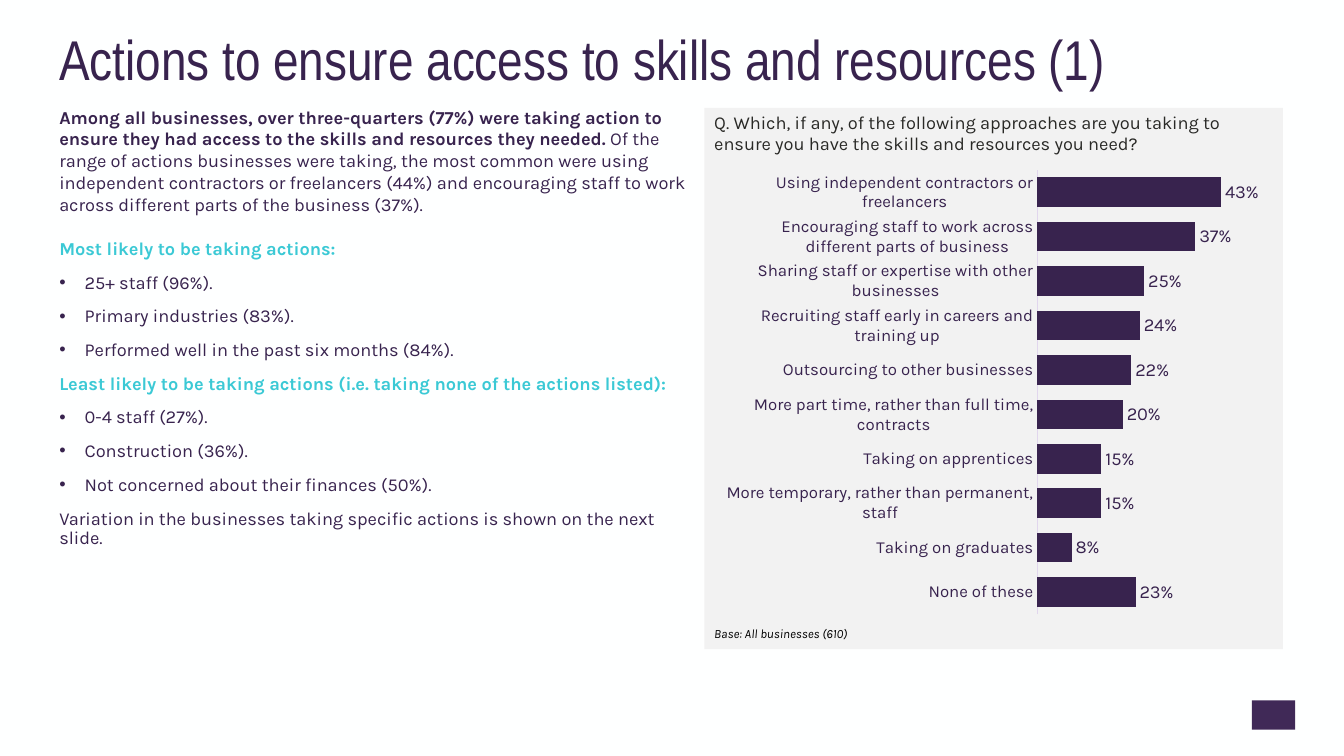
from lxml import etree
from pptx import Presentation
from pptx import util as u
from pptx.chart.data import CategoryChartData
from pptx.dml.color import RGBColor
from pptx.enum import chart as ch, shapes, text
from pptx.oxml import parse_xml
from pptx.oxml.ns import nsdecls, qn

PURPLE, TEAL, PANEL_GREY = "38234E", "3BC9D5", "F2F2F2"
BODY_FONT = "Karla"

TITLE = "Actions to ensure access to skills and resources (1)"
LEAD = ("Among all businesses, over three-quarters (77%) were taking action to "
        "ensure they had access to the skills and resources they needed. ")
LEAD_DETAIL = ("Of the range of actions businesses were taking, the most common were "
               "using independent contractors or freelancers (44%) and encouraging "
               "staff to work across different parts of the business (37%).")
# (kind, wording, space before in points, line spacing)
FINDINGS = [
    ("heading", "Most likely to be taking actions:", 16, 1.0),
    ("bullet", "25+ staff (96%).", 10, 0.9),
    ("bullet", "Primary industries (83%).", 10, 0.9),
    ("bullet", "Performed well in the past six months (84%).", 10, 0.9),
    ("heading", "Least likely to be taking actions (i.e. taking none of the actions listed):", 10, 0.9),
    ("bullet", "0-4 staff (27%).", 10, 0.9),
    ("bullet", "Construction (36%).", 10, 0.9),
    ("bullet", "Not concerned about their finances (50%).", 10, 0.9),
    ("plain", "Variation in the businesses taking specific actions is shown on the next slide.", 10, 0.9),
]
QUESTION = ("Q. Which, if any, of the following approaches are you taking to ensure "
            "you have the skills and resources you need?")
BASE = "Base: All businesses (610)"
APPROACHES = {
    "Using independent contractors or freelancers": 0.43,
    "Encouraging staff to work across different parts of business": 0.37,
    "Sharing staff or expertise with other businesses": 0.25,
    "Recruiting staff early in careers and training up": 0.24,
    "Outsourcing to other businesses": 0.22,
    "More part time, rather than full time, contracts": 0.20,
    "Taking on apprentices": 0.15,
    "More temporary, rather than permanent, staff": 0.15,
    "Taking on graduates": 0.08,
    "None of these": 0.23,
}
PLOT_AREA = {"x": 0.56, "y": 0.01, "w": 0.38, "h": 0.96}

LEFT, PANEL_LEFT = 1.24, 17.75
TITLE_BOX = (LEFT, 0.58, 29.21, 1.96)
BODY_BOX = (LEFT, 2.54, 16.31, 11)
PANEL_BOX = (PANEL_LEFT, 2.72, 14.58, 13.64)
QUESTION_BOX = (PANEL_LEFT, 2.66, 14.68, 1.37)
BASE_BOX = (PANEL_LEFT, 15.65, 11.89, 0.64)
CHART_BOX = (18.21, 4.17, 14.17, 11.66)
PAGE_MARK_BOX = (31.55, 17.65, 1.09, 0.74)


def rgb(value):
    return RGBColor.from_string(value)


def cm(box):
    return [u.Cm(length) for length in box]


def place(shape, box):
    shape.left, shape.top, shape.width, shape.height = cm(box)


def style(font, size, color=PURPLE, name=BODY_FONT, bold=None, italic=None):
    font.size, font.name, font.bold, font.italic = u.Pt(size), name, bold, italic
    font.color.rgb = rgb(color)


def set_bullet(paragraph, bulleted):
    """Give the paragraph a hanging bullet, or none and no indent."""
    properties = paragraph._p.get_or_add_pPr()
    indent = u.Cm(0.64) if bulleted else 0
    properties.set("marL", str(indent))
    properties.set("indent", str(-indent))
    if bulleted:
        etree.SubElement(properties, qn("a:buFont")).set("typeface", "Arial")
        etree.SubElement(properties, qn("a:buChar")).set("char", "•")
    else:
        etree.SubElement(properties, qn("a:buNone"))


def add_block(slide, box, color):
    block = slide.shapes.add_shape(shapes.MSO_SHAPE.RECTANGLE, *cm(box))
    block.shadow.inherit = False
    block.fill.solid()
    block.fill.fore_color.rgb = rgb(color)
    block.line.fill.background()


def add_caption(slide, box, wording, size, color, italic=None):
    frame = slide.shapes.add_textbox(*cm(box)).text_frame
    frame.word_wrap = True
    frame.vertical_anchor = text.MSO_ANCHOR.MIDDLE
    frame.text = wording
    style(frame.paragraphs[0].font, size, color, italic=italic)


def fill_title(title):
    place(title, TITLE_BOX)
    frame = title.text_frame
    frame.text = TITLE
    frame.auto_size = text.MSO_AUTO_SIZE.NONE
    frame.vertical_anchor = text.MSO_ANCHOR.MIDDLE
    heading = frame.paragraphs[0]
    heading.alignment = text.PP_ALIGN.LEFT
    heading.line_spacing = 0.9
    style(heading.font, 40, name="Arial Narrow")


def fill_body(body):
    place(body, BODY_BOX)
    frame = body.text_frame
    frame.auto_size = text.MSO_AUTO_SIZE.NONE
    lead = frame.paragraphs[0]
    set_bullet(lead, False)
    lead.space_before = u.Pt(0)
    style(lead.font, 13)
    for wording, bold in ((LEAD, True), (LEAD_DETAIL, False)):
        run = lead.add_run()
        run.text, run.font.bold = wording, bold
    for kind, wording, before, spacing in FINDINGS:
        finding = frame.add_paragraph()
        finding.text = wording
        set_bullet(finding, kind == "bullet")
        finding.space_before, finding.line_spacing = u.Pt(before), spacing
        is_heading = kind == "heading"
        style(finding.font, 13, TEAL if is_heading else PURPLE, bold=is_heading)


def add_approaches_chart(slide):
    data = CategoryChartData(number_format="0%")
    data.categories = list(APPROACHES)
    data.add_series("Series 1", list(APPROACHES.values()))
    chart = slide.shapes.add_chart(
        ch.XL_CHART_TYPE.BAR_CLUSTERED, *cm(CHART_BOX), data).chart
    chart.has_legend = chart.has_title = False
    style(chart.font, 13, name="Calibri")

    approaches = chart.category_axis
    approaches.reverse_order = True
    approaches.major_tick_mark = ch.XL_TICK_MARK.NONE
    approaches.format.line.color.rgb = rgb("E1D6ED")
    approaches.format.line.width = u.Pt(0.75)
    style(approaches.tick_labels.font, 12)

    shares = chart.value_axis
    shares.visible = shares.has_major_gridlines = False
    shares.minimum_scale, shares.maximum_scale = 0, 0.5

    plot = chart.plots[0]
    plot.gap_width = 50
    plot.vary_by_categories = False
    bars = plot.series[0].format.fill
    bars.solid()
    bars.fore_color.rgb = rgb(PURPLE)
    plot.has_data_labels = True
    labels = plot.data_labels
    labels.show_value = True
    labels.position = ch.XL_LABEL_POSITION.OUTSIDE_END
    labels.number_format, labels.number_format_is_linked = "0%", False
    style(labels.font, 13)

    area = chart._chartSpace.find(".//" + qn("c:plotArea"))
    for automatic in area.findall(qn("c:layout")):
        area.remove(automatic)
    modes = '<c:layoutTarget val="inner"/><c:xMode val="edge"/><c:yMode val="edge"/>'
    sides = "".join(f'<c:{side} val="{part}"/>' for side, part in PLOT_AREA.items())
    area.insert(0, parse_xml(
        f'<c:layout {nsdecls("c")}><c:manualLayout>{modes}{sides}'
        "</c:manualLayout></c:layout>"))


def main():
    deck = Presentation()
    deck.slide_width, deck.slide_height = u.Cm(33.87), u.Cm(19.05)
    slide = deck.slides.add_slide(deck.slide_layouts[1])
    slide.background.fill.solid()
    slide.background.fill.fore_color.rgb = rgb("FEFFFF")
    fill_title(slide.shapes.title)
    fill_body(slide.placeholders[1])
    add_block(slide, PAGE_MARK_BOX, "402957")
    add_block(slide, PANEL_BOX, PANEL_GREY)
    add_caption(slide, BASE_BOX, BASE, 9, "000000", italic=True)
    add_caption(slide, QUESTION_BOX, QUESTION, 13, "292926")
    add_approaches_chart(slide)
    deck.save("out.pptx")


if __name__ == "__main__":
    main()
